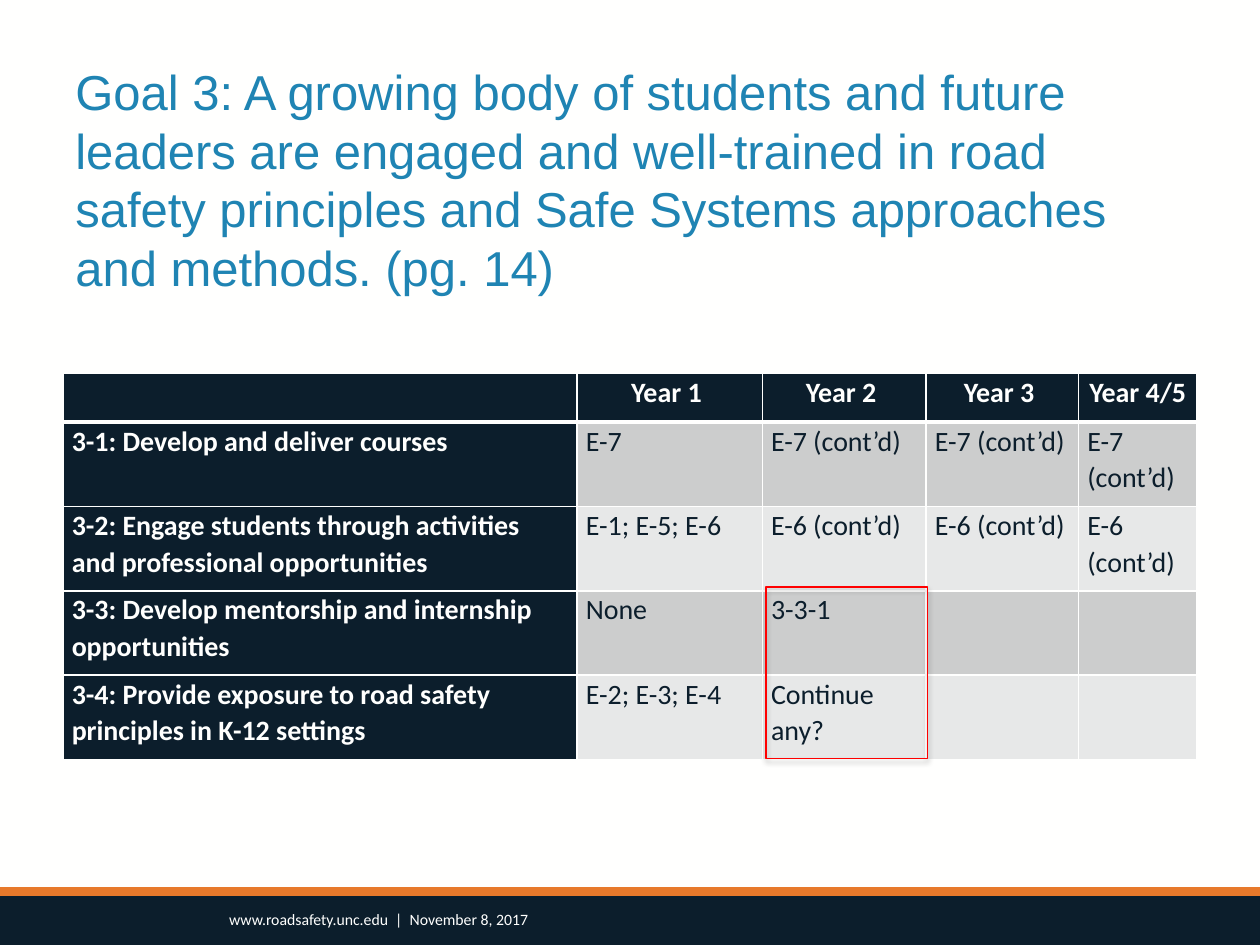
from lxml import etree
from pptx import Presentation
from pptx import util as u
from pptx.dml.color import RGBColor
from pptx.enum import shapes, text
from pptx.oxml import ns

COLORS = {
    "paper": "FFFFFE",
    "navy": "0C1E2C",
    "orange": "E7792B",
    "title": "1F84B3",
    "band_dark": "CCCDCD",
    "band_light": "E7E8E8",
    "highlight": "FF0000",
    "shadow": "000000",
}
COLUMN_WIDTHS = [4.08, 1.47, 1.3, 1.21, 0.94]
ROW_HEIGHTS = [0.39, 0.67, 0.67, 0.67, 0.67]
PLAN = [
    ["", "Year 1 ", "Year 2 ", "Year 3 ", "Year 4/5 "],
    ["3-1: Develop and deliver courses", "E-7"] + ["E-7 (cont’d)"] * 3,
    ["3-2: Engage students through activities and professional opportunities",
     "E-1; E-5; E-6"] + ["E-6 (cont’d)"] * 3,
    ["3-3: Develop mentorship and internship opportunities",
     "None", "3-3-1", "", ""],
    ["3-4: Provide exposure to road safety principles in K-12 settings",
     "E-2; E-3; E-4", "Continue any?", "", ""],
]
TITLE = ("Goal 3: A growing body of students and future leaders are engaged "
         "and well-trained in road safety principles and Safe Systems "
         "approaches and methods. (pg. 14)")


def rgb(name):
    return RGBColor.from_string(COLORS[name])


def set_attributes(target, values):
    for name, value in values.items():
        setattr(target, name, value)


def add_child(parent, tag, **attributes):
    return etree.SubElement(parent, ns.qn(tag), attributes)


def format_font(font, name, size, color, bold=False):
    set_attributes(font, {"name": name, "size": u.Pt(size), "bold": bold})
    font.color.rgb = rgb(color)


def add_rectangle(slide, box, fill=None, line=None):
    shape = slide.shapes.add_shape(
        shapes.MSO_SHAPE.RECTANGLE, *map(u.Inches, box))
    shape.shadow.inherit = False
    if fill:
        shape.fill.solid()
        shape.fill.fore_color.rgb = rgb(fill)
    else:
        shape.fill.background()
    if line:
        shape.line.color.rgb = rgb(line)
        shape.line.width = u.Pt(0.75)
    else:
        shape.line.fill.background()
    return shape


def add_shadow(shape):
    effects = shape._element.spPr.find(ns.qn("a:effectLst"))
    shadow = add_child(effects, "a:outerShdw", blurRad=str(u.Pt(3.1)),
                       dist=str(u.Pt(1.8)), dir="5400000", rotWithShape="0")
    color = add_child(shadow, "a:srgbClr", val=COLORS["shadow"])
    add_child(color, "a:alpha", val="35000")


def add_text(slide, box, content, anchor, margin, font):
    shape = slide.shapes.add_textbox(*map(u.Inches, box))
    frame = shape.text_frame
    set_attributes(frame, {
        "word_wrap": True,
        "vertical_anchor": anchor,
        "margin_top": u.Inches(margin),
        "margin_bottom": u.Inches(margin),
    })
    paragraph = frame.paragraphs[0]
    paragraph.text = content
    format_font(paragraph.font, *font)


def set_borders(cell, is_header):
    properties = cell._tc.get_or_add_tcPr()
    widths = {"L": 1, "R": 1, "T": 1, "B": 3 if is_header else 1}
    for index, (side, width) in enumerate(widths.items()):
        line = etree.Element(ns.qn(f"a:ln{side}"), w=str(u.Pt(width)))
        fill = add_child(line, "a:solidFill")
        add_child(fill, "a:srgbClr", val=COLORS["paper"])
        properties.insert(index, line)


def format_cell(cell, content, row, column):
    is_header = row == 0
    is_label = is_header or column == 0
    band = "band_dark" if row % 2 else "band_light"
    set_attributes(cell, {
        "margin_left": u.Inches(0.07),
        "margin_right": u.Inches(0.07),
        "margin_top": 0,
        "margin_bottom": 0,
    })
    cell.fill.solid()
    cell.fill.fore_color.rgb = rgb("navy" if is_label else band)
    set_borders(cell, is_header)
    paragraph = cell.text_frame.paragraphs[0]
    paragraph.text = content
    set_attributes(paragraph, {
        "line_spacing": 1.07,
        "alignment": text.PP_ALIGN.CENTER if is_header else text.PP_ALIGN.LEFT,
    })
    format_font(paragraph.font, "Calibri", 16,
                "paper" if is_label else "navy", is_label)


def add_plan_table(slide, left, top):
    size = sum(COLUMN_WIDTHS), sum(ROW_HEIGHTS)
    frame = slide.shapes.add_table(
        len(PLAN), len(COLUMN_WIDTHS), *map(u.Inches, (left, top, *size)))
    table = frame.table
    for column, width in zip(table.columns, COLUMN_WIDTHS):
        column.width = u.Inches(width)
    for row, height in zip(table.rows, ROW_HEIGHTS):
        row.height = u.Inches(height)
    for row, contents in enumerate(PLAN):
        for column, content in enumerate(contents):
            format_cell(table.cell(row, column), content, row, column)


def main():
    presentation = Presentation()
    set_attributes(presentation, {
        "slide_width": u.Inches(10),
        "slide_height": u.Inches(7.5),
    })
    slide = presentation.slides.add_slide(presentation.slide_layouts[6])
    slide.background.fill.solid()
    slide.background.fill.fore_color.rgb = rgb("paper")

    add_rectangle(slide, (0, 7.04, 10, 0.46), fill="navy")
    add_rectangle(slide, (0, 7.04, 10, 0.07), fill="orange")
    add_text(slide, (0.5, 0.64, 9, 1.56), TITLE, text.MSO_ANCHOR.MIDDLE,
             0.05, ("Arial", 28, "title"))
    add_plan_table(slide, 0.5, 2.96)
    add_text(slide, (1.72, 7.16, 5.45, 0.21),
             "www.roadsafety.unc.edu  |  November 8, 2017",
             text.MSO_ANCHOR.BOTTOM, 0, ("Calibri", 9, "paper"))
    add_shadow(add_rectangle(slide, (6.08, 4.66, 1.28, 1.36),
                             line="highlight"))
    presentation.save("out.pptx")


if __name__ == "__main__":
    main()
